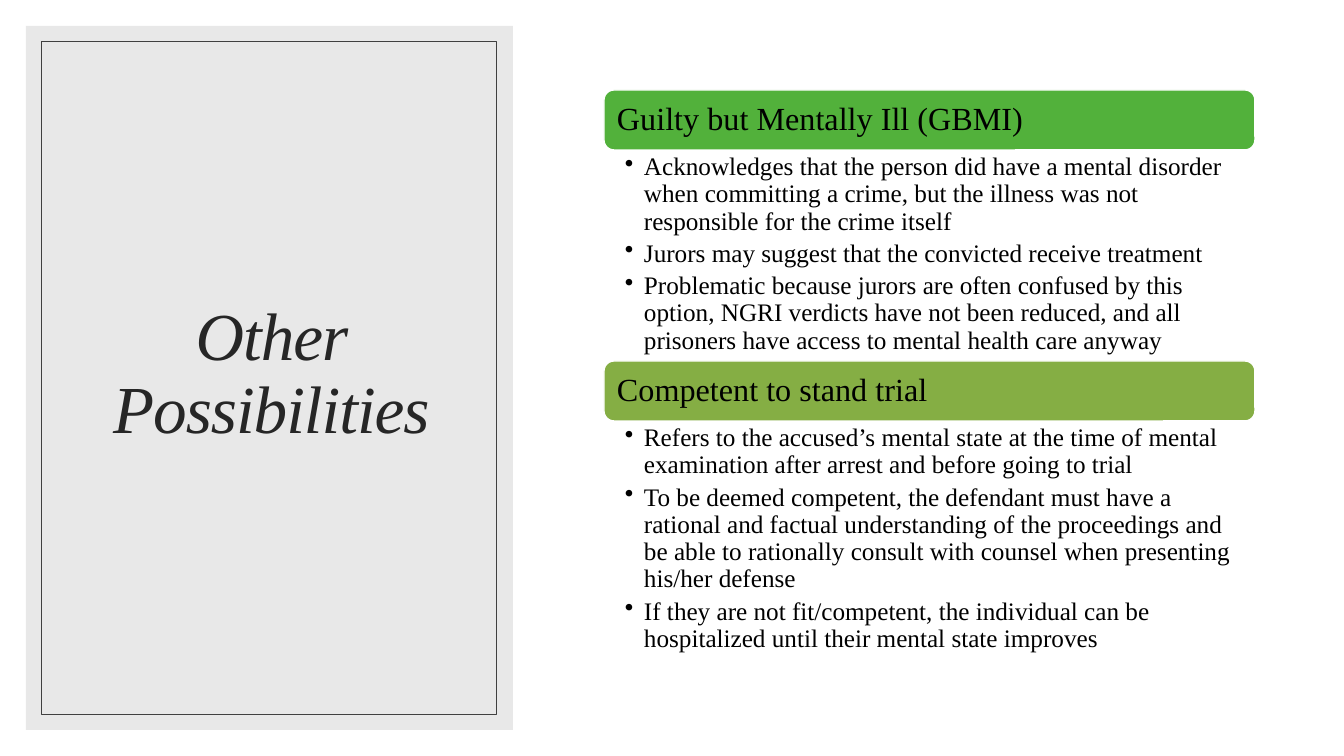
from lxml import etree
from pptx import Presentation
from pptx.dml.color import RGBColor
from pptx.enum.shapes import MSO_SHAPE
from pptx.enum.text import MSO_ANCHOR, PP_ALIGN
from pptx.oxml.ns import qn
from pptx.util import Emu, Pt

RECT, ROUND = MSO_SHAPE.RECTANGLE, MSO_SHAPE.ROUNDED_RECTANGLE
TOP, MIDDLE = MSO_ANCHOR.TOP, MSO_ANCHOR.MIDDLE
LEFT, CENTER = PP_ALIGN.LEFT, PP_ALIGN.CENTER
FONT = "Times New Roman"
SCALE = 914400 / 100.8

deck = Presentation()
deck.slide_width, deck.slide_height = Emu(12192000), Emu(6858000)
slide = deck.slides.add_slide(deck.slide_layouts[6])


def add_box(kind, place, fill=None, line=None, width=1):
    box = slide.shapes.add_shape(kind, *(Emu(round(n * SCALE)) for n in place))
    box.shadow.inherit = False
    if fill:
        box.fill.solid()
        box.fill.fore_color.rgb = RGBColor.from_string(fill)
    else:
        box.fill.background()
    if line:
        box.line.color.rgb = RGBColor.from_string(line)
        box.line.width = Pt(width)
    else:
        box.line.fill.background()
    return box


def add_text(place, lines, size, anchor, insets, color="000000", align=LEFT, after=0):
    box = slide.shapes.add_textbox(*(Emu(round(n * SCALE)) for n in place))
    frame = box.text_frame
    frame.word_wrap = True
    frame.vertical_anchor = anchor
    (frame.margin_left, frame.margin_top,
     frame.margin_right, frame.margin_bottom) = (Emu(round(n * SCALE)) for n in insets)
    frame.text = "\n".join(lines)
    for para in frame.paragraphs:
        para.alignment = align
        para.line_spacing = 0.9
        para.space_after = Pt(after)
        para.font.name = FONT
        para.font.size = Pt(size)
        para.font.color.rgb = RGBColor.from_string(color)
    return frame.paragraphs


# Title panel
panel = add_box(RECT, (26, 26, 487, 704), "D9D9D9")
tint = panel.fill._xPr.find(".//" + qn("a:srgbClr"))
etree.SubElement(tint, qn("a:alpha"), val="60000")
title = add_text((64, 61, 415, 629), ["Other Possibilities"], 48, MIDDLE,
                 (10, 5, 10, 5), "262626", CENTER)[0]
title.font.italic = True
title.runs[0]._r.get_or_add_rPr().set("spc", "-70")
add_box(RECT, (41, 41, 455, 673), line="404040", width=0.5)

# Headed bullet lists
topics = [
    ("Guilty but Mentally Ill (GBMI)", "52B13B", 90, 210, [
        "Acknowledges that the person did have a mental disorder when committing "
        "a crime, but the illness was not responsible for the crime itself",
        "Jurors may suggest that the convicted receive treatment",
        "Problematic because jurors are often confused by this option, NGRI verdicts "
        "have not been reduced, and all prisoners have access to mental health care anyway",
    ]),
    ("Competent to stand trial", "85AE44", 361, 242, [
        "Refers to the accused’s mental state at the time of mental examination "
        "after arrest and before going to trial",
        "To be deemed competent, the defendant must have a rational and factual "
        "understanding of the proceedings and be able to rationally consult with "
        "counsel when presenting his/her defense",
        "If they are not fit/competent, the individual can be hospitalized until "
        "their mental state improves",
    ]),
]
left, wide, bar, pad = 604, 651, 60, 3
indent = round(19 * SCALE)
for head, color, top, tall, points in topics:
    add_box(ROUND, (left, top, wide, bar), color, "FFFFFF")
    add_text((left + pad, top + pad, wide - 2 * pad, bar - 2 * pad), [head], 23,
             MIDDLE, (10, 10, 10, 10))
    for para in add_text((left, top + bar + 1, wide, tall), points, 18, TOP,
                         (21, 3, 18, 3), after=3.6):
        para.level = 1
        props = para._p.get_or_add_pPr()
        props.set("marL", str(indent))
        props.set("indent", str(-indent))
        bullet = etree.Element(qn("a:buChar"), char="•")
        props.find(qn("a:defRPr")).addprevious(bullet)

deck.save("out.pptx")
